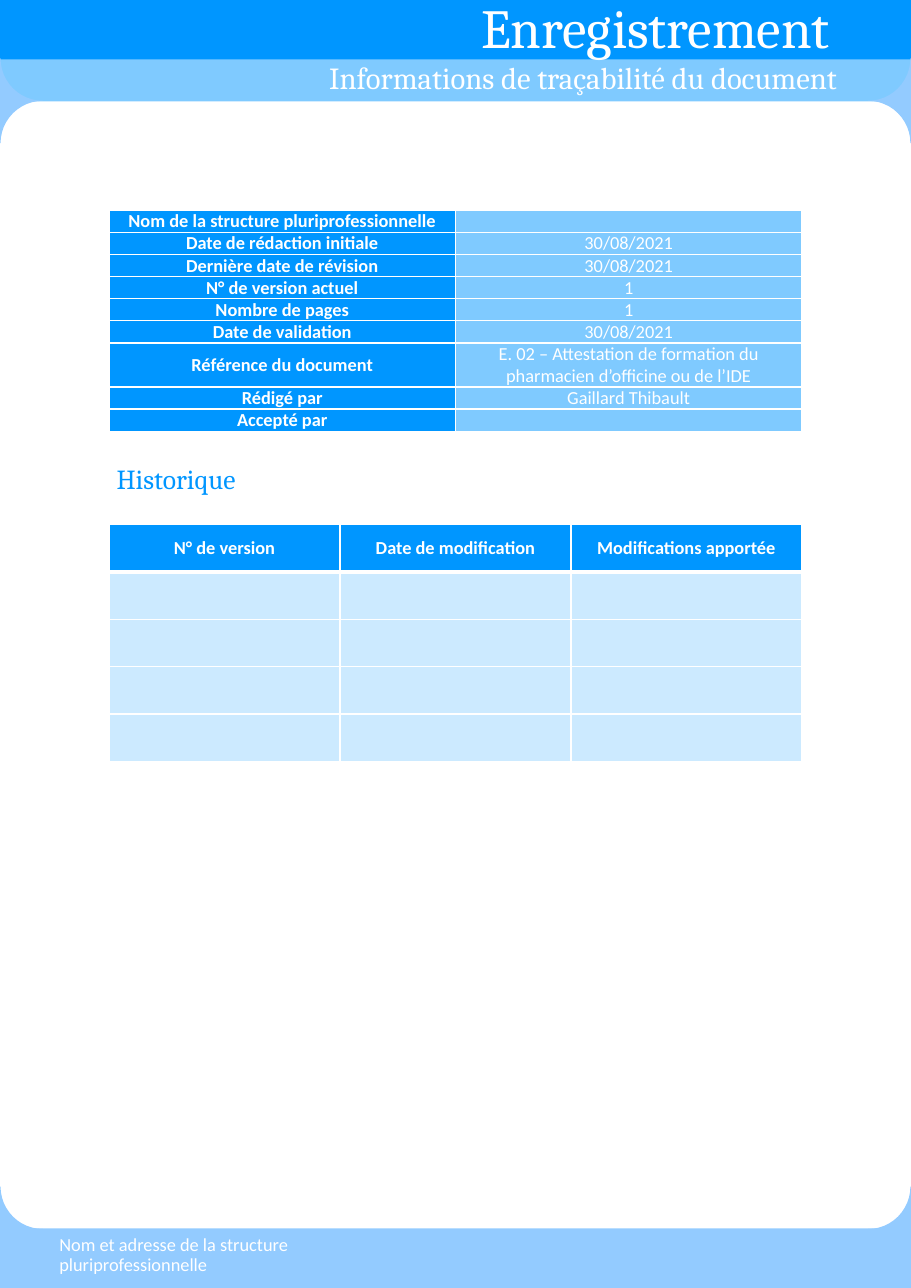
from lxml import etree
from pptx import Presentation
from pptx.dml.color import RGBColor
from pptx.enum.shapes import MSO_SHAPE
from pptx.enum.text import MSO_ANCHOR, MSO_AUTO_SIZE, PP_ALIGN
from pptx.oxml import parse_xml
from pptx.oxml.ns import nsdecls, qn
from pptx.util import Inches, Pt

RECTANGLE, PLAQUE = MSO_SHAPE.RECTANGLE, MSO_SHAPE.PLAQUE
LEFT, CENTER, RIGHT = PP_ALIGN.LEFT, PP_ALIGN.CENTER, PP_ALIGN.RIGHT
TOP, MIDDLE = MSO_ANCHOR.TOP, MSO_ANCHOR.MIDDLE
NO_AUTOFIT = MSO_AUTO_SIZE.NONE
BLUE, PALE_BLUE, WHITE = "0096FF", "93CBFF", "FFFFFF"


def paint(fill, color, opacity=100):
    fill.solid()
    fill.fore_color.rgb = RGBColor.from_string(color)
    if opacity < 100:
        color_element = fill._xPr.find(qn("a:solidFill"))[0]
        etree.SubElement(color_element, qn("a:alpha"), val=str(opacity * 1000))


def write(frame, text, font_name, size, color, align=LEFT, bold=False):
    paragraph = frame.paragraphs[0]
    paragraph.alignment = align
    run = paragraph.add_run()
    run.text = text
    font_format = {"name": font_name, "size": Pt(size), "bold": bold}
    for attribute, value in font_format.items():
        setattr(run.font, attribute, value)
    paint(run.font.fill, color)
    return paragraph


prs = Presentation()
prs.slide_width, prs.slide_height = Inches(8.27), Inches(11.69)
slide = prs.slides.add_slide(prs.slide_layouts[5])
shapes = slide.shapes

# Header and footer bands, with the rounded corners of the page
frame_parts = [
    (RECTANGLE, 0, 0.49, 8.27, 0.43, BLUE, 50),
    (RECTANGLE, 0, 0, 8.27, 0.54, BLUE, 100),
    (RECTANGLE, 0, 11.15, 8.27, 0.54, PALE_BLUE, 100),
]
for corner_top in (0.53, 10.77):
    for corner_left in (-0.44, 7.88):
        frame_parts.append(
            (PLAQUE, corner_left, corner_top, 0.83, 0.77, PALE_BLUE, 100))
for kind, left, top, width, height, color, opacity in frame_parts:
    part = shapes.add_shape(
        kind, Inches(left), Inches(top), Inches(width), Inches(height))
    part.shadow.inherit = False
    part.line.fill.background()
    paint(part.fill, color, opacity)
    if kind == PLAQUE:
        part.adjustments[0] = 0.5

# Title, brought in front of the bands
title = shapes.title
shapes._spTree.append(title._element)
title_place = {"left": 1.54, "top": 0.52, "width": 6.16, "height": 0.4}
for attribute, value in title_place.items():
    setattr(title, attribute, Inches(value))
title_format = {"vertical_anchor": MIDDLE, "word_wrap": True,
                "auto_size": NO_AUTOFIT}
for attribute, value in title_format.items():
    setattr(title.text_frame, attribute, value)
write(title.text_frame, "Informations de traçabilité du document",
      "Cambria", 20, WHITE, RIGHT).line_spacing = 0.9

# Document type, section heading and footer
labels = [
    ("Enregistrement", 4.27, -0.11, 4, 0.71, "Cambria", 36, WHITE, 1),
    ("Historique", 0.96, 4.14, 3.15, 0.4, "Cambria", 18, BLUE, 1),
    ("Nom et adresse de la structure pluriprofessionnelle",
     0.44, 11.17, 2.7, 0.48, "Calibri", 12, WHITE, 0.9),
]
for text, left, top, width, height, font_name, size, color, spacing in labels:
    label = shapes.add_textbox(
        Inches(left), Inches(top), Inches(width), Inches(height))
    label.text_frame.word_wrap = True
    label.text_frame.vertical_anchor = TOP
    write(label.text_frame, text, font_name, size, color).line_spacing = spacing

# Traceability and version history tables
traceability = [
    ("Nom de la structure pluriprofessionnelle", ""),
    ("Date de rédaction initiale", "30/08/2021"),
    ("Dernière date de révision", "30/08/2021"),
    ("N° de version actuel", "1"),
    ("Nombre de pages", "1"),
    ("Date de validation", "30/08/2021"),
    ("Référence du document",
     "E. 02 – Attestation de formation du pharmacien d’officine ou de l’IDE"),
    ("Rédigé par", "Gaillard Thibault"),
    ("Accepté par", ""),
]
history = [("N° de version", "Date de modification", "Modifications apportée")]
history += [("", "", "")] * 4
cell_format = {"margin_left": Inches(0.07), "margin_right": Inches(0.07),
               "margin_top": 0, "margin_bottom": 0, "vertical_anchor": MIDDLE}

for rows, top, row_height, header_in_row, opacity in (
        (traceability, 1.91, 0.2, False, 50), (history, 4.76, 0.43, True, 20)):
    column_count = len(rows[0])
    table = shapes.add_table(
        len(rows), column_count, Inches(0.99), Inches(top),
        Inches(6.29), Inches(row_height * len(rows))).table
    table.horz_banding = False
    for r, row in enumerate(rows):
        table.rows[r].height = Inches(row_height)
        for c, text in enumerate(row):
            cell = table.cell(r, c)
            is_header = r == 0 if header_in_row else c == 0
            for attribute, value in cell_format.items():
                setattr(cell, attribute, value)
            paint(cell.fill, BLUE, 100 if is_header else opacity)
            if text:
                write(cell.text_frame, text, "Calibri", 12, WHITE, CENTER, is_header)
            else:
                etree.SubElement(cell.text_frame.paragraphs[0]._p,
                                 qn("a:endParaRPr"), sz="1200")
            # White borders, thicker under the history header
            widths = {"lnL": 1, "lnR": 1,
                      "lnT": 3 if header_in_row and r == 1 else 1,
                      "lnB": 3 if header_in_row and r == 0 else 1}
            for position, (side, points) in enumerate(widths.items()):
                cell._tc.tcPr.insert(position, parse_xml(
                    f'<a:{side} {nsdecls("a")} w="{Pt(points)}"><a:solidFill>'
                    f'<a:srgbClr val="{WHITE}"/></a:solidFill></a:{side}>'))

prs.save("out.pptx")
